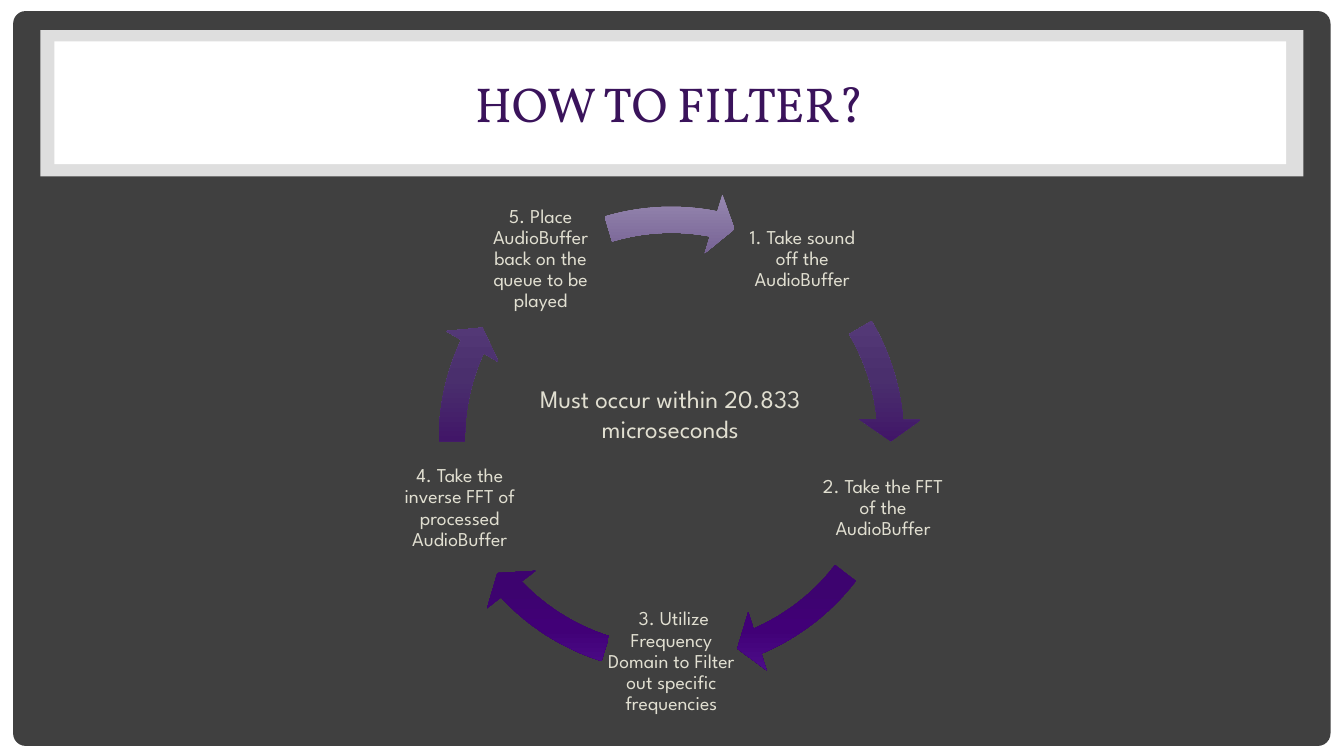
"""Build a slide that shows the five-step audio filter cycle."""
from dataclasses import dataclass
from math import cos, radians, sin

from lxml import etree
from pptx import Presentation
from pptx.dml.color import RGBColor
from pptx.enum.shapes import MSO_SHAPE
from pptx.enum.text import MSO_ANCHOR, PP_ALIGN
from pptx.oxml.ns import qn
from pptx.util import Pt

RECT, ROUND_RECT = MSO_SHAPE.RECTANGLE, MSO_SHAPE.ROUNDED_RECTANGLE
CIRCULAR_ARROW = MSO_SHAPE.CIRCULAR_ARROW
CENTER, MIDDLE, TOP = PP_ALIGN.CENTER, MSO_ANCHOR.MIDDLE, MSO_ANCHOR.TOP

TITLE_FONT, BODY_FONT = "Vollkorn", "League Spartan"
WHITE, CHARCOAL, PURPLE, CREAM, MINT = "FFFFFF", "404040", "3A135B", "E1DFD1", "95DBCF"
GRADIENT = [(0, "998BB2"), (25, "553A78"), (38, "4A2F6D"), (55, "3D0C66"),
            (80, "3D036F"), (88, "410077"), (100, "521292")]

CENTER_X, CENTER_Y = 479.6, 313.8
LABEL_RADIUS, LABEL_SIZE, RING_SIZE = 159, 95, 357.1
FIRST_ANGLE, STEP_ANGLE = -54, 72


@dataclass
class Panel:
    box: tuple
    color: str
    kind: int = RECT
    corner: float = 0
    alpha: int = 100


@dataclass
class Step:
    text: str
    arrow_end: float
    arrow_start: float


PANELS = [
    Panel((0, 0, 960, 540), WHITE),
    Panel((9.4, 7.9, 941, 524.9), CHARCOAL, ROUND_RECT, 0.017),
    Panel((28.8, 21.6, 902.2, 104.4), WHITE, alpha=83),
    Panel((38.9, 29.5, 879.8, 87.8), WHITE),
]
STEPS = [
    Step("1. Take sound off the AudioBuffer", 212.93, 197.66),
    Step("2. Take the FFT of the AudioBuffer", 40.15, 22.54),
    Step(" 3. Utilize Frequency Domain to Filter out specific frequencies", 82.1, 64.5),
    Step("4. Take the inverse FFT of processed AudioBuffer", 122.98, 107.71),
    Step("5. Place AudioBuffer back on the queue to be played", 168.66, 151.99),
]


def rgb(color: str) -> RGBColor:
    """Turn a hex string into a colour."""
    return RGBColor.from_string(color)


def write(shape, text: str, *, size: float, font: str = BODY_FONT, color: str = CREAM,
          anchor=MIDDLE, inset: float | None = None, spacing: float | None = None) -> None:
    """Put centred, formatted text into a shape."""
    tf = shape.text_frame
    tf.word_wrap = True
    tf.vertical_anchor = anchor
    if inset is not None:
        tf.margin_left = tf.margin_top = tf.margin_right = tf.margin_bottom = Pt(inset)
    p = tf.paragraphs[0]
    p.alignment = CENTER
    if spacing is not None:
        p.line_spacing = spacing
    r = p.add_run()
    r.text = text
    r.font.size, r.font.name = Pt(size), font
    r.font.color.rgb = rgb(color)


def add_plain_shape(s, kind, box: tuple):
    """Add a preset shape without line or shadow."""
    sp = s.shapes.add_shape(kind, *map(Pt, box))
    sp.shadow.inherit = False
    sp.line.fill.background()
    return sp


def add_panel(s, panel: Panel) -> None:
    """Draw one background panel."""
    sp = add_plain_shape(s, panel.kind, panel.box)
    sp.fill.solid()
    sp.fill.fore_color.rgb = rgb(panel.color)
    if panel.corner:
        sp.adjustments[0] = panel.corner
    if panel.alpha < 100:
        clr = sp.element.spPr.find(qn("a:solidFill")).find(qn("a:srgbClr"))
        etree.SubElement(clr, qn("a:alpha"), val=str(panel.alpha * 1000))


def fill_gradient(sp) -> None:
    """Fill a shape with the purple gradient, from top to bottom."""
    sp.fill.gradient()
    sp.fill.gradient_angle = 270
    stops = sp.element.spPr.find(qn("a:gradFill")).find(qn("a:gsLst"))
    for gs in list(stops):
        stops.remove(gs)
    for position, color in GRADIENT:
        gs = etree.SubElement(stops, qn("a:gs"), pos=str(position * 1000))
        etree.SubElement(gs, qn("a:srgbClr"), val=color)


def add_step(s, index: int, step: Step) -> None:
    """Draw the label of one step and the arrow that follows it."""
    angle = radians(FIRST_ANGLE + index * STEP_ANGLE)
    left = CENTER_X + LABEL_RADIUS * cos(angle) - LABEL_SIZE / 2
    top = CENTER_Y + LABEL_RADIUS * sin(angle) - LABEL_SIZE / 2
    label = s.shapes.add_textbox(*map(Pt, (left, top, LABEL_SIZE, LABEL_SIZE)))
    write(label, step.text, size=14, inset=1.4, spacing=0.9)

    half = RING_SIZE / 2
    arrow = add_plain_shape(s, CIRCULAR_ARROW,
                            (CENTER_X - half, CENTER_Y - half, RING_SIZE, RING_SIZE))
    for i, value in enumerate((0.052, 3.36, step.arrow_end, step.arrow_start, 0.061)):
        arrow.adjustments[i] = value
    fill_gradient(arrow)


def main() -> None:
    """Build and save the slide."""
    prs = Presentation()
    prs.slide_width, prs.slide_height = Pt(960), Pt(540)
    s = prs.slides.add_slide(prs.slide_layouts[5])
    s.background.fill.solid()
    s.background.fill.fore_color.rgb = rgb(MINT)

    for panel in PANELS:
        add_panel(s, panel)

    title = s.shapes.title
    s.shapes.element.append(title.element)
    title.left, title.top, title.width, title.height = map(Pt, (44.6, 32.4, 867.6, 82.1))
    write(title, "HOW TO FILTER?", size=35, font=TITLE_FONT, color=PURPLE)

    for index, step in enumerate(STEPS):
        add_step(s, index, step)

    note = s.shapes.add_textbox(*map(Pt, (372.2, 270, 213.1, 51.1)))
    write(note, "Must occur within 20.833 microseconds", size=18, anchor=TOP)

    prs.save("out.pptx")


if __name__ == "__main__":
    main()
